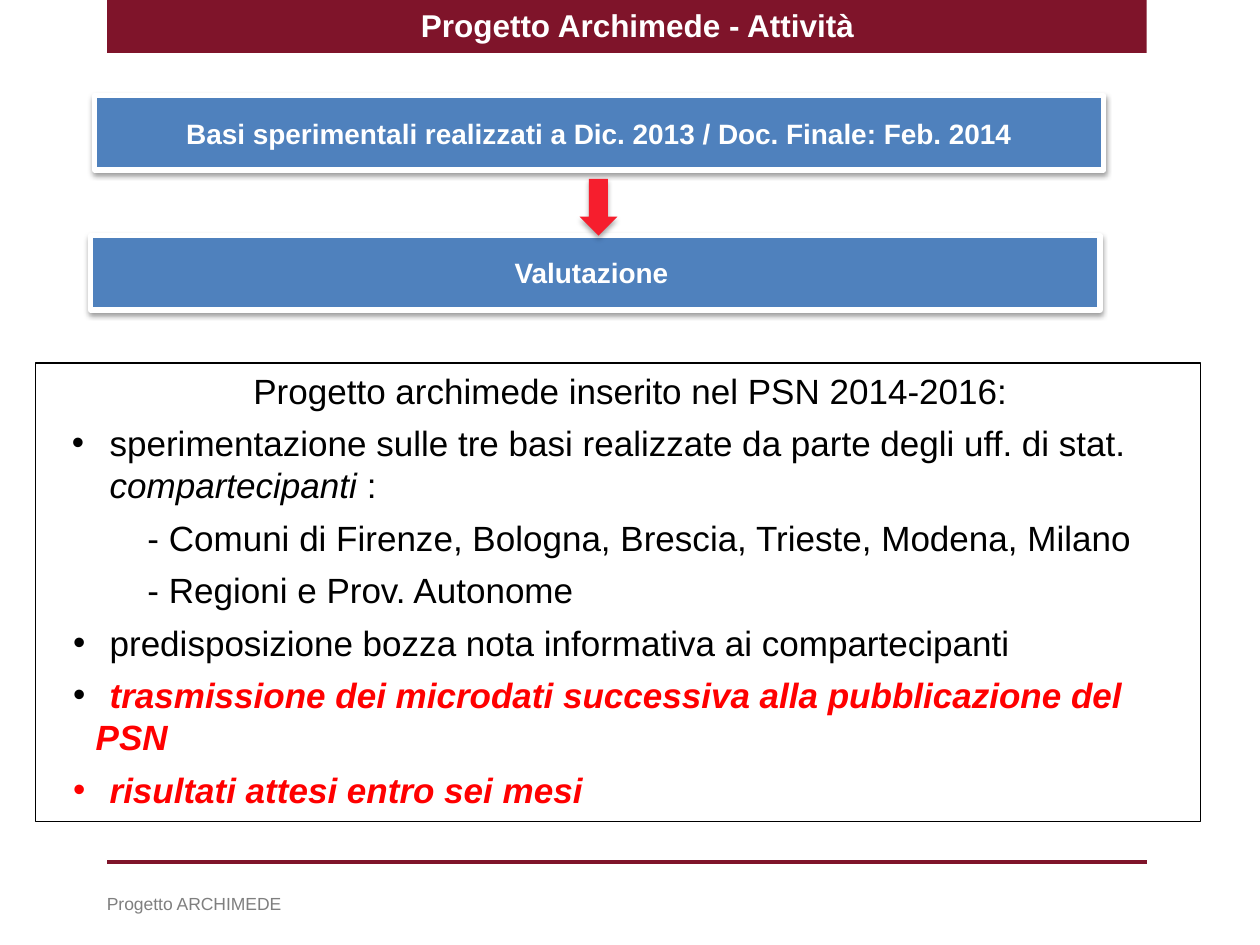
import pptx
import pptx.dml.color
import pptx.enum.shapes
import pptx.enum.text
import pptx.oxml
import pptx.oxml.ns
import pptx.util

Inches = pptx.util.Inches
Pt = pptx.util.Pt
RGB = pptx.dml.color.RGBColor
Kind = pptx.enum.shapes.MSO_SHAPE
Align = pptx.enum.text.PP_ALIGN
Anchor = pptx.enum.text.MSO_ANCHOR
Fit = pptx.enum.text.MSO_AUTO_SIZE

WINE = RGB(0x7F, 0x14, 0x2A)
BLUE = RGB(0x4F, 0x81, 0xBD)
RED = RGB(0xFF, 0, 0)
SCARLET = RGB(0xF6, 0x1E, 0x2D)
GRAY = RGB(0x7F, 0x7F, 0x7F)
WHITE = RGB(0xFF, 0xFF, 0xFF)
BLACK = RGB(0, 0, 0)

NS = pptx.oxml.ns.nsdecls("a")
DASH = (0.79, -0.79, None)
DOT = (0.38, -0.18, 0.49)
ALARM = dict(color=RED, bold=True, italic=True)
ITEMS = [
    ((0.2, -0.2, None), False, [
        ("\t", dict(size=19)),
        ("Progetto archimede inserito nel PSN 2014-2016:", {})]),
    ((0.49, -0.3, None), True, [
        ("sperimentazione sulle tre basi realizzate da parte degli uff. di stat. ", {}),
        ("compartecipanti", dict(italic=True)),
        (" :", {})]),
    (DASH, False, [
        ("\t- Comuni di Firenze, Bologna, Brescia, Trieste, Modena, Milano", {})]),
    (DASH, False, [("\t- Regioni e Prov. Autonome", {})]),
    (DOT, True, [("\tpredisposizione bozza nota informativa ai compartecipanti", {})]),
    (DOT, True, [
        ("\t", {}),
        ("trasmissione dei microdati successiva alla pubblicazione del PSN", ALARM)]),
    (DOT, True, [("\trisultati attesi entro sei mesi", ALARM)]),
]


def place(shape, left, top, width, height):
    shape.left, shape.top = Inches(left), Inches(top)
    shape.width, shape.height = Inches(width), Inches(height)


def add_run(para, text, size=20, color=BLACK, bold=False, italic=False):
    run = para.add_run()
    run.text = text
    font = run.font
    font.name, font.size = "Arial", Pt(size)
    font.bold, font.italic = bold, italic
    font.color.rgb = color


def add_shade(shape, alpha, dist):
    shape.element.spPr.append(pptx.oxml.parse_xml(
        f'<a:effectLst {NS}><a:outerShdw blurRad="{Pt(3.1)}" dist="{Pt(dist)}" '
        f'dir="5400000" rotWithShape="0"><a:srgbClr val="000000">'
        f'<a:alpha val="{alpha * 1000}"/></a:srgbClr></a:outerShdw></a:effectLst>'))


def add_solid(slide, kind, box, color):
    shape = slide.shapes.add_shape(kind, *map(Inches, box))
    shape.fill.solid()
    shape.fill.fore_color.rgb = color
    shape.line.fill.background()
    return shape


def add_step(slide, left, top, text):
    shape = add_solid(slide, Kind.RECTANGLE, (left, top, 8.01, 0.59), BLUE)
    shape.line.color.rgb = WHITE
    shape.line.width = Pt(3)
    add_shade(shape, 38, 1.6)
    frame = shape.text_frame
    frame.word_wrap = True
    frame.vertical_anchor = Anchor.MIDDLE
    para = frame.paragraphs[0]
    para.alignment = Align.CENTER
    add_run(para, text, 16, WHITE, True)


def add_arrow(slide):
    add_shade(add_solid(slide, Kind.DOWN_ARROW, (4.6, 1.42, 0.3, 0.45), SCARLET), 35, 1.8)


def add_rule(slide):
    rule = slide.shapes.add_connector(
        pptx.enum.shapes.MSO_CONNECTOR.STRAIGHT,
        *map(Inches, (0.85, 6.84, 9.1, 6.84)))
    rule.line.color.rgb = WINE
    rule.line.width = Pt(2)
    rule.element.spPr.append(pptx.oxml.parse_xml(f"<a:effectLst {NS}/>"))


def add_band(slide):
    band = add_solid(slide, Kind.RECTANGLE, (0.85, 0, 8.25, 0.42), WINE)
    band.shadow.inherit = False
    slide.shapes.element.insert(2, band.element)


def set_title(slide):
    title = slide.shapes.title
    place(title, 3.24, 0, 3.67, 0.4)
    frame = title.text_frame
    frame.auto_size = Fit.NONE
    frame.word_wrap = False
    frame.vertical_anchor = Anchor.TOP
    para = frame.paragraphs[0]
    para.alignment = Align.LEFT
    add_run(para, "Progetto Archimede - Attività", 18, WHITE, True)


def set_indent(para, left, first, tab, dot):
    props = para._p.get_or_add_pPr()
    props.set("marL", str(Inches(left)))
    props.set("indent", str(Inches(first)))
    mark = '<a:buChar {} char="•"/>' if dot else "<a:buNone {}/>"
    props.append(pptx.oxml.parse_xml(mark.format(NS)))
    if tab:
        props.append(pptx.oxml.parse_xml(
            f'<a:tabLst {NS}><a:tab pos="{Inches(tab)}" algn="l"/></a:tabLst>'))


def set_list(slide):
    body = slide.placeholders[1]
    place(body, 0.28, 2.88, 9.25, 3.64)
    body.line.color.rgb = BLACK
    body.line.width = Pt(0.75)
    frame = body.text_frame
    frame.auto_size = Fit.NONE
    frame.word_wrap = True
    for i, (indent, dot, runs) in enumerate(ITEMS):
        para = frame.add_paragraph() if i else frame.paragraphs[0]
        set_indent(para, *indent, dot)
        para.alignment = Align.LEFT if i else Align.CENTER
        para.line_spacing = 1.0
        para.space_before, para.space_after = Pt(0), Pt(6)
        for text, style in runs:
            add_run(para, text, **style)


def add_foot(slide):
    box = slide.shapes.add_textbox(*map(Inches, (0.75, 7.04, 5.13, 0.27)))
    box.text_frame.word_wrap = True
    add_run(box.text_frame.paragraphs[0], "Progetto ARCHIMEDE", 10, GRAY)


def main():
    deck = pptx.Presentation()
    deck.slide_width, deck.slide_height = Inches(10), Inches(7.5)
    slide = deck.slides.add_slide(deck.slide_layouts[1])
    add_band(slide)
    add_rule(slide)
    set_title(slide)
    add_step(slide, 0.75, 0.76,
             "Basi sperimentali realizzati a Dic. 2013 / Doc. Finale: Feb. 2014")
    add_foot(slide)
    add_step(slide, 0.72, 1.87, "Valutazione ")
    add_arrow(slide)
    set_list(slide)
    deck.save("out.pptx")


if __name__ == "__main__":
    main()
